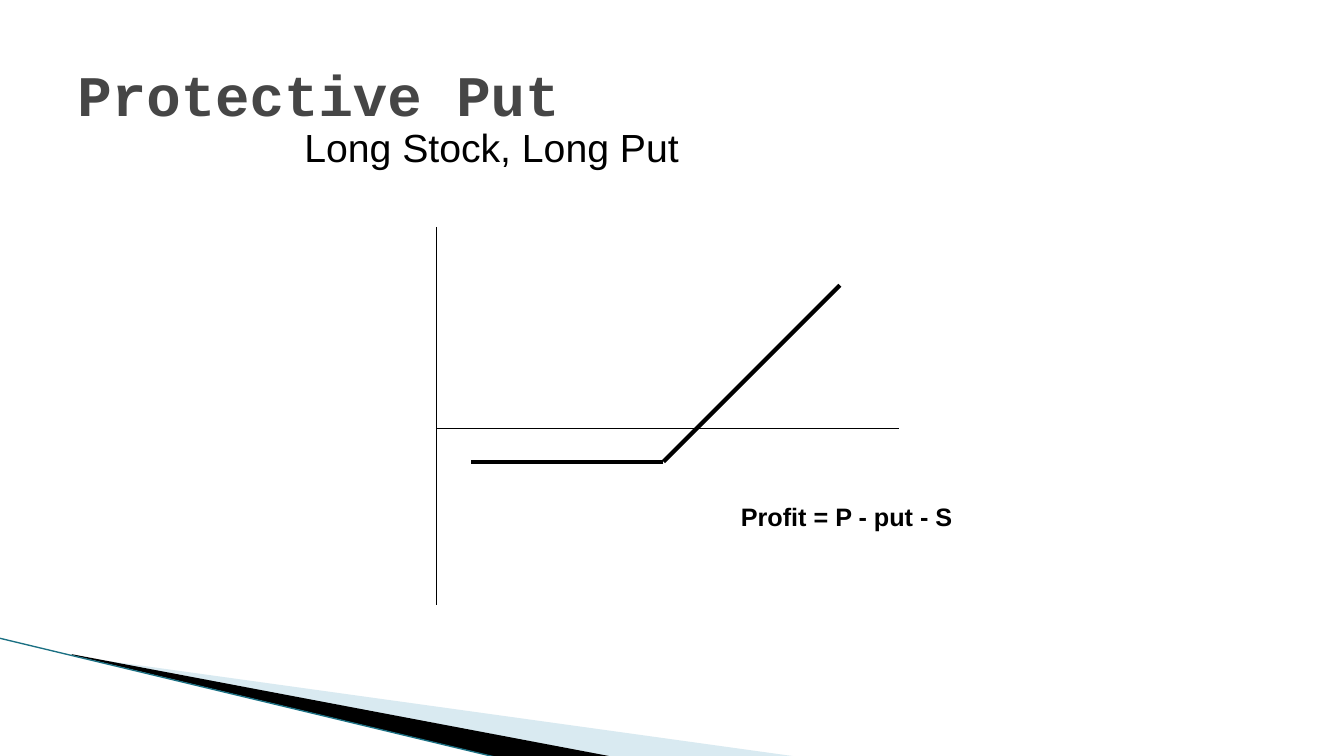
from lxml import etree
from pptx import Presentation
from pptx.dml.color import RGBColor
from pptx.enum.shapes import MSO_CONNECTOR
from pptx.enum.text import MSO_ANCHOR
from pptx.oxml.ns import qn
from pptx.util import Inches, Pt

STRAIGHT = MSO_CONNECTOR.STRAIGHT
TOP, MIDDLE = MSO_ANCHOR.TOP, MSO_ANCHOR.MIDDLE

COLORS = {
    "black": "000000",
    "title": "464646",
    "pale_blue": "A0CBDC",
    "teal": "1B7083",
}

presentation = Presentation()
presentation.slide_width = Inches(13.33)
presentation.slide_height = Inches(7.5)
slide = presentation.slides.add_slide(presentation.slide_layouts[6])
shapes = slide.shapes

# Corner wedges: outline points, color, opacity in percent
wedges = [
    ([(0.73, 6.51), (7.93, 7.51), (6.08, 7.51), (0.73, 6.5)], "pale_blue", 40),
    ([(0.71, 6.49), (6.09, 7.51), (4.96, 7.52), (0.72, 6.5)], "black", 100),
]
for points, color, opacity in wedges:
    corners = [(Inches(x), Inches(y)) for x, y in points]
    builder = shapes.build_freeform(*corners[0])
    builder.add_line_segments(corners[1:], close=True)
    wedge = builder.convert_to_shape()
    wedge.shadow.inherit = False
    wedge.line.fill.background()
    wedge.fill.solid()
    wedge.fill.fore_color.rgb = RGBColor.from_string(COLORS[color])
    if opacity < 100:
        color_element = wedge.fill._xPr.find(qn("a:solidFill"))[0]
        etree.SubElement(color_element, qn("a:alpha"), val=str(opacity * 1000))

# Lines: start, end, color, width in points
origin = (4.33, 4.25)
strike = (6.58, 4.58)
lines = [
    ((-0.01, 6.33), (4.95, 7.52), "teal", 0.95),
    ((origin[0], 2.25), (origin[0], 6), "black", 0.75),
    (origin, (8.92, origin[1]), "black", 0.75),
    ((8.33, 2.83), strike, "black", 3),
    (strike, (4.67, strike[1]), "black", 3),
]
for start, end, color, width in lines:
    line = shapes.add_connector(STRAIGHT, *(Inches(value) for value in start + end))
    line.line.color.rgb = RGBColor.from_string(COLORS[color])
    line.line.width = Pt(width)
    etree.SubElement(line._element.spPr, qn("a:effectLst"))

# Texts: wording, box, anchor, font, size, bold, color
texts = [
    ("Protective Put", (0.67, 0.3, 12, 1.25), MIDDLE, "Courier New", 41, True, "title"),
    ("Long Stock, Long Put", (2.92, 1.17, 7.83, 0.57), TOP, "Arial", 28, False, "black"),
    ("Profit = P - put - S", (7.25, 4.92, 3.83, 0.86), TOP, "Arial", 18, True, "black"),
]
for wording, box, anchor, font_name, size, bold, color in texts:
    text_box = shapes.add_textbox(*(Inches(value) for value in box))
    frame = text_box.text_frame
    frame.word_wrap = True
    frame.vertical_anchor = anchor
    run = frame.paragraphs[0].add_run()
    run.text = wording
    run.font.name = font_name
    run.font.size = Pt(size)
    run.font.bold = bold
    run.font.color.rgb = RGBColor.from_string(COLORS[color])

presentation.save("out.pptx")
